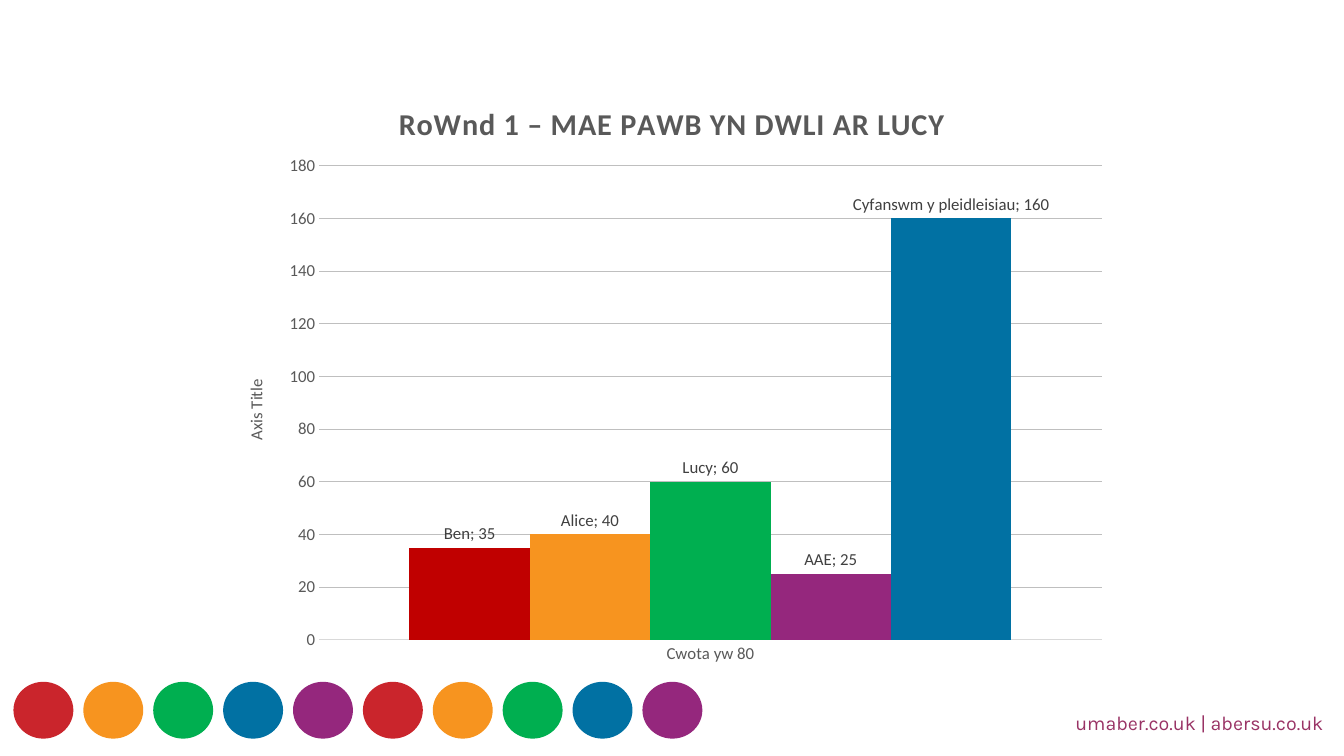
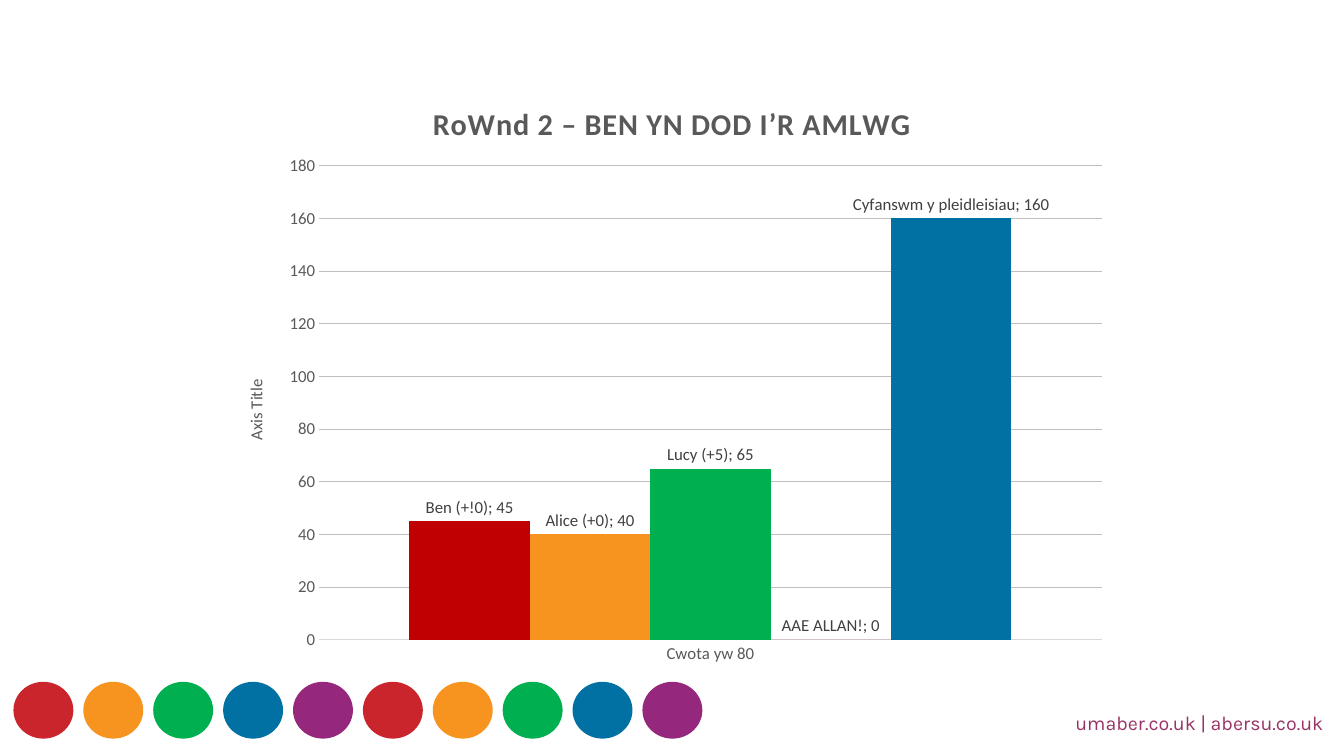
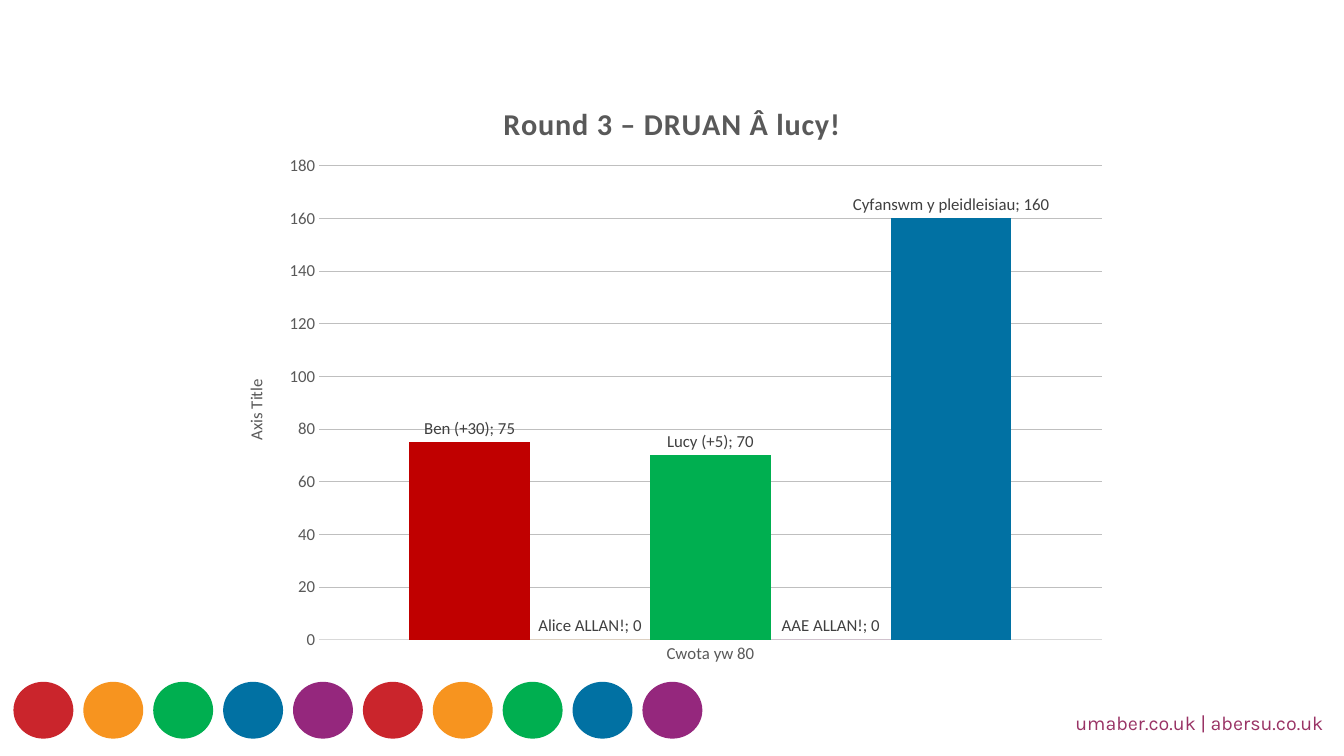
from lxml import etree
from pptx import Presentation
from pptx import util as u
from pptx.chart.data import CategoryChartData
from pptx.dml.color import RGBColor
from pptx.enum import chart as ch, shapes
from pptx.oxml import parse_xml
from pptx.oxml.ns import nsdecls, qn

Pt = u.Pt
BODY_FONT, FOOTER_FONT = "Calibri", "Karla"
GREY, LABEL_GREY, GRID, AXIS_LINE = "595959", "404040", "BFBFBF", "D9D9D9"
FOOTER_COLOUR = "993365"
DOT_COLOURS = ["CA252C", "F7941F", "00AF50", "0171A3", "95277D"]
BAR_COLOURS = ["C00000", "F7941F", "00AF50", "95277D", "0171A3"]

CHART_LEFT, CHART_TOP, CHART_WIDTH, CHART_HEIGHT = 160, 57, 640, 427
PLOT_LEFT, PLOT_TOP, PLOT_WIDTH, PLOT_HEIGHT = 68, 61.5, 559, 338.5

TOTAL = ("Cyfanswm y pleidleisiau", 160)
ROUNDS = [
    ("RoWnd 1 – MAE PAWB YN DWLI AR LUCY",
     [("Ben", 35), ("Alice", 40), ("Lucy", 60), ("AAE", 25), TOTAL]),
    ("RoWnd 2 – BEN YN DOD I’R AMLWG",
     [("Ben (+!0)", 45), ("Alice (+0)", 40), ("Lucy (+5)", 65), ("AAE ALLAN!", 0), TOTAL]),
    ("Round 3 – DRUAN Â lucy!",
     [("Ben (+30)", 75), ("Alice ALLAN!", 0), ("Lucy (+5)", 70), ("AAE ALLAN!", 0), TOTAL]),
]


def colour(hex_code):
    return RGBColor.from_string(hex_code)


def style_font(font, size=12, hex_code=GREY, name=BODY_FONT, bold=False):
    font.size, font.name, font.bold = Pt(size), name, bold
    font.color.rgb = colour(hex_code)


def write(frame, wording, spacing=0, **style):
    """Put one formatted run into a text frame; spacing is in points."""
    run = frame.paragraphs[0].add_run()
    run.text = wording
    style_font(run.font, **style)
    if spacing:
        run.font._element.set("spc", str(int(spacing * 100)))


def add_dots(slide):
    row = slide.shapes.add_group_shape()
    for i, hex_code in enumerate(DOT_COLOURS * 2):
        dot = row.shapes.add_shape(shapes.MSO_SHAPE.OVAL, Pt(10.1 + 49.92 * i),
                                   Pt(487.5), Pt(41.8), Pt(39.6))
        dot.shadow.inherit = False
        dot.fill.solid()
        dot.fill.fore_color.rgb = colour(hex_code)
        dot.line.color.rgb = colour(hex_code)
        dot.line.width = Pt(1)


def add_footer(slide):
    box = slide.shapes.add_textbox(Pt(761), Pt(504), Pt(201.6), Pt(41))
    box.text_frame.word_wrap = True
    write(box.text_frame, "umaber.co.uk | abersu.co.uk", size=14,
          hex_code=FOOTER_COLOUR, name=FOOTER_FONT)


def fix_plot_area(chart):
    """Give the inner plot area a fixed place within the chart."""
    plot_area = chart._chartSpace.chart.plotArea
    for automatic in plot_area.findall(qn("c:layout")):
        plot_area.remove(automatic)
    layout = parse_xml(f"<c:layout {nsdecls('c')}><c:manualLayout/></c:layout>")
    settings = [("layoutTarget", "inner"), ("xMode", "edge"), ("yMode", "edge"),
                ("x", PLOT_LEFT / CHART_WIDTH), ("y", PLOT_TOP / CHART_HEIGHT),
                ("w", PLOT_WIDTH / CHART_WIDTH), ("h", PLOT_HEIGHT / CHART_HEIGHT)]
    for tag, value in settings:
        etree.SubElement(layout[0], qn(f"c:{tag}")).set("val", str(value))
    plot_area.insert(0, layout)


def style_axes(chart):
    for axis in (chart.category_axis, chart.value_axis):
        axis.major_tick_mark = axis.minor_tick_mark = ch.XL_TICK_MARK.NONE
        style_font(axis.tick_labels.font)
    quota_line = chart.category_axis.format.line
    quota_line.color.rgb, quota_line.width = colour(AXIS_LINE), Pt(0.75)

    votes = chart.value_axis
    votes.minimum_scale, votes.maximum_scale, votes.major_unit = 0, 180, 20
    votes.format.line.fill.background()
    votes.has_major_gridlines = True
    grid = votes.major_gridlines.format.line
    grid.color.rgb, grid.width = colour(GRID), Pt(0.75)
    write(votes.axis_title.text_frame, "Axis Title")
    votes.axis_title.text_frame._txBody.bodyPr.set("rot", "-5400000")


def style_candidate(series, hex_code):
    series.format.fill.solid()
    series.format.fill.fore_color.rgb = colour(hex_code)
    labels = series.data_labels
    labels.show_value = labels.show_series_name = True
    labels.position = ch.XL_LABEL_POSITION.OUTSIDE_END
    style_font(labels.font, hex_code=LABEL_GREY)
    separator = parse_xml(f"<c:separator {nsdecls('c')}>; </c:separator>")
    labels._element.find(qn("c:showBubbleSize")).addnext(separator)


def add_vote_chart(slide, title, votes):
    data = CategoryChartData()
    data.categories = ["Cwota yw 80"]
    for candidate, count in votes:
        data.add_series(candidate, [count])
    chart = slide.shapes.add_chart(
        ch.XL_CHART_TYPE.COLUMN_CLUSTERED, Pt(CHART_LEFT), Pt(CHART_TOP),
        Pt(CHART_WIDTH), Pt(CHART_HEIGHT), data).chart
    style_font(chart.font, size=10, hex_code="000000")
    chart.has_legend = False
    write(chart.chart_title.text_frame, title, size=21.6, bold=True, spacing=0.5)
    chart.chart_title.include_in_layout = False
    fix_plot_area(chart)
    style_axes(chart)
    plot = chart.plots[0]
    plot.gap_width, plot.overlap, plot.vary_by_categories = 150, 0, False
    for series, hex_code in zip(plot.series, BAR_COLOURS):
        style_candidate(series, hex_code)


def main():
    deck = Presentation()
    deck.slide_width, deck.slide_height = Pt(960), Pt(540)
    for title, votes in ROUNDS:
        slide = deck.slides.add_slide(deck.slide_layouts[6])
        add_footer(slide)
        add_dots(slide)
        add_vote_chart(slide, title, votes)
    deck.save("out.pptx")


if __name__ == "__main__":
    main()
